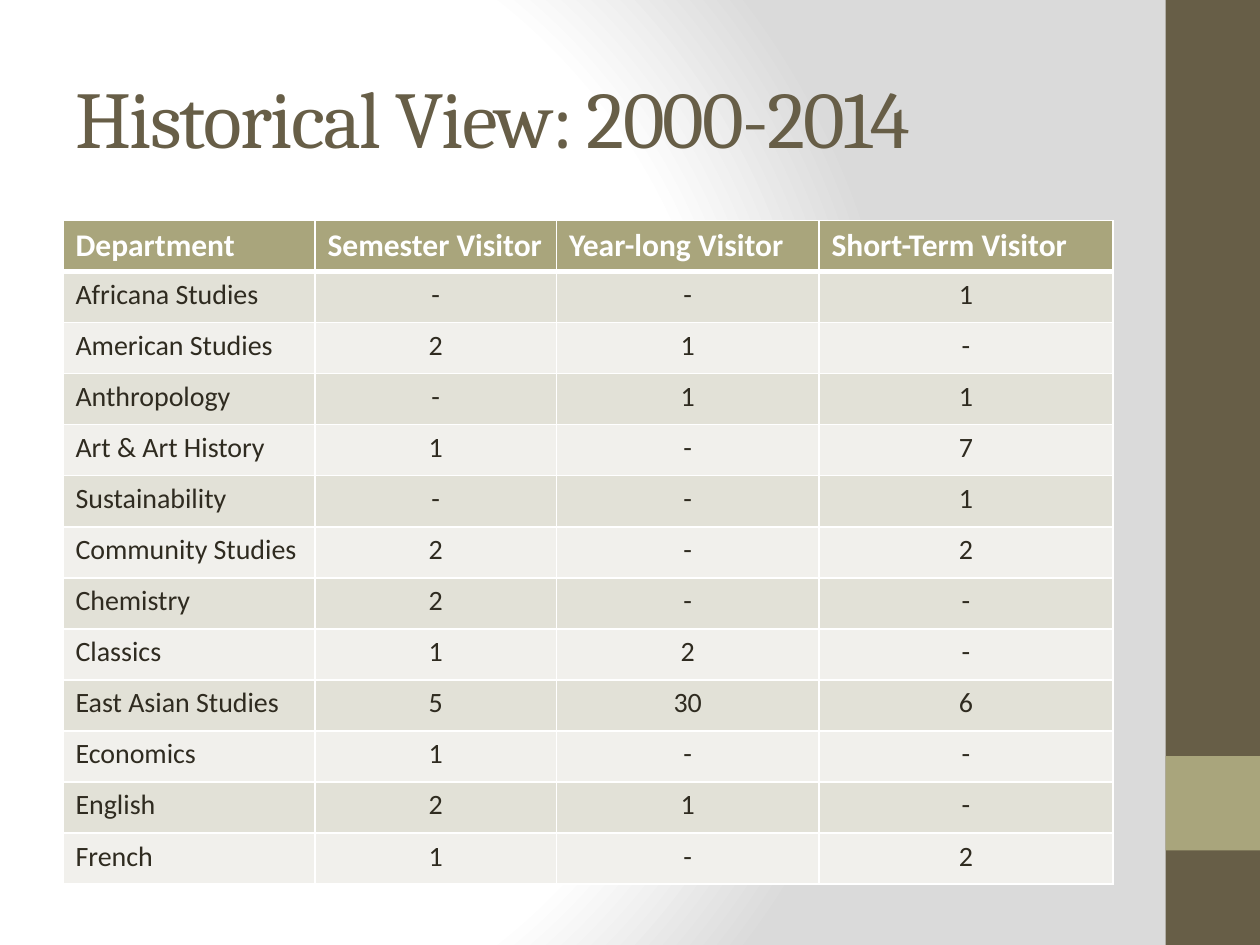
from pptx import Presentation
from pptx import util as u
from pptx.dml.color import RGBColor
from pptx.enum import shapes, text
from pptx.oxml import parse_xml
from pptx.oxml.ns import nsdecls, qn

W, H = 10, 7.5
BROWN, OLIVE, INK, WHITE = "675E47", "A9A57C", "2F2B20", "FFFFFF"
BANDS = ["E2E1D7", "F1F0EC"]
TITLE_FONT = dict(name="Cambria", size=u.Pt(46), bold=False)
HEAD_FONT = dict(name="Calibri", size=u.Pt(18), bold=True)
BODY_FONT = dict(name="Calibri", size=u.Pt(16), bold=False)

COL_SHARES = [0.24, 0.23, 0.25, 0.28]
ROWS = [
    ("Department", "Semester Visitor", "Year-long Visitor", "Short-Term Visitor"),
    ("Africana Studies", "-", "-", "1"),
    ("American Studies", "2", "1", "-"),
    ("Anthropology", "-", "1", "1"),
    ("Art & Art History", "1", "-", "7"),
    ("Sustainability", "-", "-", "1"),
    ("Community Studies", "2", "-", "2"),
    ("Chemistry", "2", "-", "-"),
    ("Classics", "1", "2", "-"),
    ("East Asian Studies", "5", "30", "6"),
    ("Economics", "1", "-", "-"),
    ("English", "2", "1", "-"),
    ("French", "1", "-", "2"),
]


def rgb(value):
    return RGBColor.from_string(value)


def inches(box):
    return [u.Inches(v) for v in box]


def write(tf, words, font, color, align=text.PP_ALIGN.LEFT):
    p = tf.paragraphs[0]
    p.alignment = align
    r = p.add_run()
    r.text = words
    for key, value in font.items():
        setattr(r.font, key, value)
    r.font.color.rgb = rgb(color)
    return r


def set_background(s):
    s.background.fill.gradient()
    grad = s._element.find(".//" + qn("a:gradFill"))
    stops = "".join(
        f'<a:gs pos="{pos * 1000}"><a:srgbClr val="{color}"/></a:gs>'
        for pos, color in [(0, WHITE), (75, WHITE), (100, "DADADA")])
    grad.getparent().replace(grad, parse_xml(
        f'<a:gradFill {nsdecls("a")} rotWithShape="1"><a:gsLst>{stops}</a:gsLst>'
        '<a:path path="circle"><a:fillToRect l="20000" t="50000" r="100000" b="50000"/>'
        '</a:path></a:gradFill>'))


def add_sidebar(s, box):
    x, y, w, h = box
    # Full-height band, then a square accent at four fifths of its height
    for part, color in [(box, BROWN), ((x, y + 0.8 * h, w, w), OLIVE)]:
        sp = s.shapes.add_shape(shapes.MSO_SHAPE.RECTANGLE, *inches(part))
        sp.shadow.inherit = False
        sp.fill.solid()
        sp.fill.fore_color.rgb = rgb(color)
        sp.line.fill.background()


def add_title(s, box, words):
    tf = s.shapes.add_textbox(*inches(box)).text_frame
    tf.word_wrap = True
    tf.vertical_anchor = text.MSO_ANCHOR.MIDDLE
    r = write(tf, words, TITLE_FONT, BROWN)
    r._r.get_or_add_rPr().set("spc", "-100")


def set_borders(cell, widths):
    tcPr = cell._tc.get_or_add_tcPr()
    for i, (side, width) in enumerate(widths.items()):
        tcPr.insert(i, parse_xml(
            f'<a:ln{side} {nsdecls("a")} w="{u.Pt(width)}"><a:solidFill>'
            f'<a:srgbClr val="{WHITE}"/></a:solidFill></a:ln{side}>'))


def add_visitor_table(s, box):
    w, h = box[2:]
    table = s.shapes.add_table(len(ROWS), len(COL_SHARES), *inches(box)).table
    for col, share in zip(table.columns, COL_SHARES):
        col.width = u.Inches(w * share)
    for i, values in enumerate(ROWS):
        table.rows[i].height = u.Inches(h / len(ROWS))
        head = i == 0
        for j, value in enumerate(values):
            cell = table.cell(i, j)
            cell.fill.solid()
            cell.fill.fore_color.rgb = rgb(OLIVE if head else BANDS[(i - 1) % 2])
            # The rule under the header is heavier than the grid
            set_borders(cell, dict(L=1, R=1, T=3 if i == 1 else 1, B=3 if head else 1))
            centred = not head and j > 0
            write(cell.text_frame, value, HEAD_FONT if head else BODY_FONT,
                  WHITE if head else INK,
                  text.PP_ALIGN.CENTER if centred else text.PP_ALIGN.LEFT)


def main():
    prs = Presentation()
    prs.slide_width, prs.slide_height = u.Inches(W), u.Inches(H)
    s = prs.slides.add_slide(prs.slide_layouts[6])
    margin, content_w = 0.05 * W, W / 1.2
    set_background(s)
    add_sidebar(s, (0.925 * W, 0, 0.075 * W, H))
    add_title(s, (margin, 0.04 * H, content_w, H / 6), "Historical View: 2000-2014")
    add_visitor_table(s, (margin, 1.75, content_w, 5.27))
    prs.save("out.pptx")


if __name__ == "__main__":
    main()
